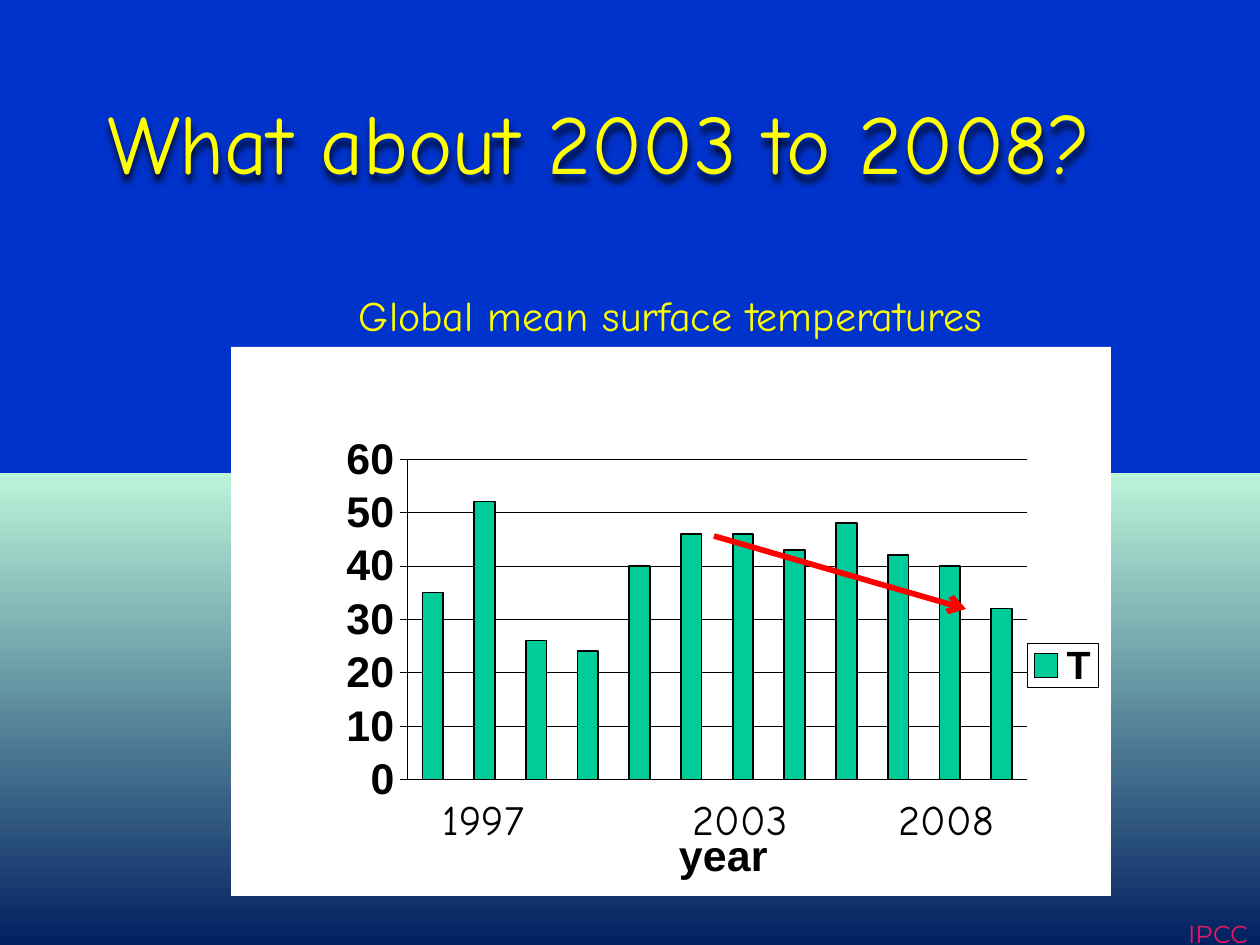
from dataclasses import dataclass

from lxml import etree
from pptx import Presentation
from pptx.chart.data import CategoryChartData
from pptx.dml.color import RGBColor
from pptx.enum.chart import XL_CHART_TYPE, XL_LEGEND_POSITION, XL_TICK_MARK
from pptx.enum.shapes import MSO_CONNECTOR
from pptx.enum.text import PP_ALIGN
from pptx.oxml import parse_xml
from pptx.oxml.ns import qn
from pptx.util import Emu, Pt

EMU_PER_PX = 914400 / 126
NAMESPACES = (
    'xmlns:a="http://schemas.openxmlformats.org/drawingml/2006/main" '
    'xmlns:c="http://schemas.openxmlformats.org/drawingml/2006/chart"'
)

BLUE = RGBColor(0x00, 0x33, 0xCC)
NAVY = RGBColor(0x00, 0x20, 0x60)
MINT = RGBColor(0xBA, 0xF5, 0xDA)
YELLOW = RGBColor(0xFF, 0xFF, 0x00)
BLACK = RGBColor(0x00, 0x00, 0x00)
WHITE = RGBColor(0xFF, 0xFF, 0xFF)
GREEN = RGBColor(0x00, 0xCC, 0x99)
RED = RGBColor(0xFF, 0x00, 0x00)
PINK = RGBColor(0xE8, 0x17, 0x66)

LEFT = PP_ALIGN.LEFT
CENTER = PP_ALIGN.CENTER
COLUMNS = XL_CHART_TYPE.COLUMN_CLUSTERED
LEGEND_RIGHT = XL_LEGEND_POSITION.RIGHT
TICK_OUTSIDE = XL_TICK_MARK.OUTSIDE
STRAIGHT = MSO_CONNECTOR.STRAIGHT

TEMPERATURES = (35, 52, 26, 24, 40, 46, 46, 43, 48, 42, 40, 32)
BACKGROUND_STOPS = ((0, BLUE), (50, BLUE), (50, MINT), (100, NAVY))
YEAR_TABS = (250, 456)


@dataclass(frozen=True)
class Label:
    text: str
    left: int
    top: int
    width: int
    height: int
    size: int
    color: RGBColor
    font: str = "Comic Neue"
    alignment: PP_ALIGN = LEFT
    side_margin: int = 13
    tabs: tuple[int, ...] = ()
    shadow: bool = False


LABELS = (
    Label("IPCC", 1178, 913, 80, 32, 14, PINK, "Montserrat", CENTER, side_margin=0),
    Label("What about 2003 to 2008?", 94, 84, 1113, 115, 48, YELLOW, shadow=True),
    Label("1997\t2003\t2008", 430, 787, 581, 63, 24, BLACK, tabs=YEAR_TABS),
    Label("Global mean surface temperatures", 346, 283, 706, 63, 24, YELLOW),
)


def px(length: int) -> Emu:
    return Emu(round(length * EMU_PER_PX))


def xml(tag: str, content: str = ""):
    return parse_xml(f"<{tag} {NAMESPACES}>{content}</{tag}>")


def paint_background(slide) -> None:
    fill = slide.background.fill
    fill.gradient()
    fill.gradient_angle = 270
    stop_list = next(slide.background._cSld.iter(qn("a:gsLst")))
    for stop in list(stop_list):
        stop_list.remove(stop)
    for position, color in BACKGROUND_STOPS:
        stop = etree.SubElement(stop_list, qn("a:gs"), pos=str(position * 1000))
        etree.SubElement(stop, qn("a:srgbClr"), val=str(color))


def add_label(slide, label: Label) -> None:
    shape = slide.shapes.add_textbox(
        px(label.left), px(label.top), px(label.width), px(label.height)
    )
    text_frame = shape.text_frame
    text_frame.word_wrap = True
    text_frame.margin_left = text_frame.margin_right = px(label.side_margin)
    text_frame.text = label.text
    paragraph = text_frame.paragraphs[0]
    paragraph.alignment = label.alignment
    if label.tabs:
        tab_list = etree.SubElement(paragraph._p.get_or_add_pPr(), qn("a:tabLst"))
        for tab in label.tabs:
            etree.SubElement(tab_list, qn("a:tab"), pos=str(px(tab)), algn="l")
    for run in paragraph.runs:
        run.font.name = label.font
        run.font.size = Pt(label.size)
        run.font.color.rgb = label.color
    if label.shadow:
        shape._element.spPr.append(xml(
            "a:effectLst",
            '<a:outerShdw blurRad="50800" dist="50800" dir="5400000">'
            '<a:srgbClr val="000000"><a:alpha val="80000"/></a:srgbClr>'
            "</a:outerShdw>",
        ))


def set_layout(element, index: int, inner: bool = False, **places: float) -> None:
    for layout in element.findall(qn("c:layout")):
        element.remove(layout)
    target = '<c:layoutTarget val="inner"/>' if inner else ""
    modes = '<c:xMode val="edge"/><c:yMode val="edge"/>'
    values = "".join(f'<c:{name} val="{place}"/>' for name, place in places.items())
    content = f"<c:manualLayout>{target}{modes}{values}</c:manualLayout>"
    element.insert(index, xml("c:layout", content))


def format_font(font, size: float) -> None:
    font.name = "Arial"
    font.size = Pt(size)
    font.bold = True
    font.color.rgb = BLACK


def format_line(line, color: RGBColor, width: float) -> None:
    line.color.rgb = color
    line.width = Pt(width)


def box_properties(line: str):
    fill = f'<a:solidFill><a:srgbClr val="{WHITE}"/></a:solidFill>'
    return xml("c:spPr", fill + line)


def add_temperature_chart(slide) -> None:
    data = CategoryChartData()
    data.categories = [str(number + 1) for number in range(len(TEMPERATURES))]
    data.add_series("T", TEMPERATURES)
    chart = slide.shapes.add_chart(
        COLUMNS, px(231), px(347), px(880), px(549), data
    ).chart
    chart.has_title = False
    format_font(chart.font, 24.5)
    chart_space = chart._chartSpace
    chart_space.find(qn("c:chart")).addnext(
        box_properties("<a:ln><a:noFill/></a:ln>")
    )
    plot_area = next(chart_space.iter(qn("c:plotArea")))
    set_layout(plot_area, 0, inner=True, x=0.2, y=0.204, w=0.705, h=0.584)

    plot = chart.plots[0]
    plot.gap_width = 150
    plot.vary_by_categories = False
    series = plot.series[0]
    series.format.fill.solid()
    series.format.fill.fore_color.rgb = GREEN
    format_line(series.format.line, BLACK, 1)

    year_axis = chart.category_axis
    year_axis.visible = False
    title = year_axis.axis_title
    title.text_frame.text = "year"
    format_font(title.text_frame.paragraphs[0].runs[0].font, 24.5)
    set_layout(title._element, 1, x=0.5, y=0.86)

    value_axis = chart.value_axis
    value_axis.minimum_scale = 0
    value_axis.maximum_scale = 60
    value_axis.major_unit = 10
    value_axis.major_tick_mark = TICK_OUTSIDE
    format_font(value_axis.tick_labels.font, 24.5)
    format_line(value_axis.format.line, BLACK, 0.25)
    format_line(value_axis.major_gridlines.format.line, BLACK, 0.25)

    chart.has_legend = True
    legend = chart.legend
    legend.position = LEGEND_RIGHT
    legend.include_in_layout = False
    format_font(legend.font, 22.5)
    set_layout(legend._element, 1, x=0.905, y=0.54, w=0.08, h=0.08)
    legend._element.find(qn("c:txPr")).addprevious(box_properties(
        '<a:ln w="3175"><a:solidFill>'
        f'<a:srgbClr val="{BLACK}"/></a:solidFill></a:ln>'
    ))


def add_trend_arrow(slide) -> None:
    arrow = slide.shapes.add_connector(STRAIGHT, px(714), px(536), px(966), px(609))
    format_line(arrow.line, RED, 3.25)
    etree.SubElement(arrow.line._get_or_add_ln(), qn("a:tailEnd"), type="arrow")
    arrow._element.spPr.append(xml("a:effectLst"))


def main() -> None:
    presentation = Presentation()
    presentation.slide_width = px(1260)
    presentation.slide_height = px(945)
    slide = presentation.slides.add_slide(presentation.slide_layouts[6])
    paint_background(slide)
    add_temperature_chart(slide)
    for label in LABELS:
        add_label(slide, label)
    add_trend_arrow(slide)
    presentation.save("out.pptx")


if __name__ == "__main__":
    main()
